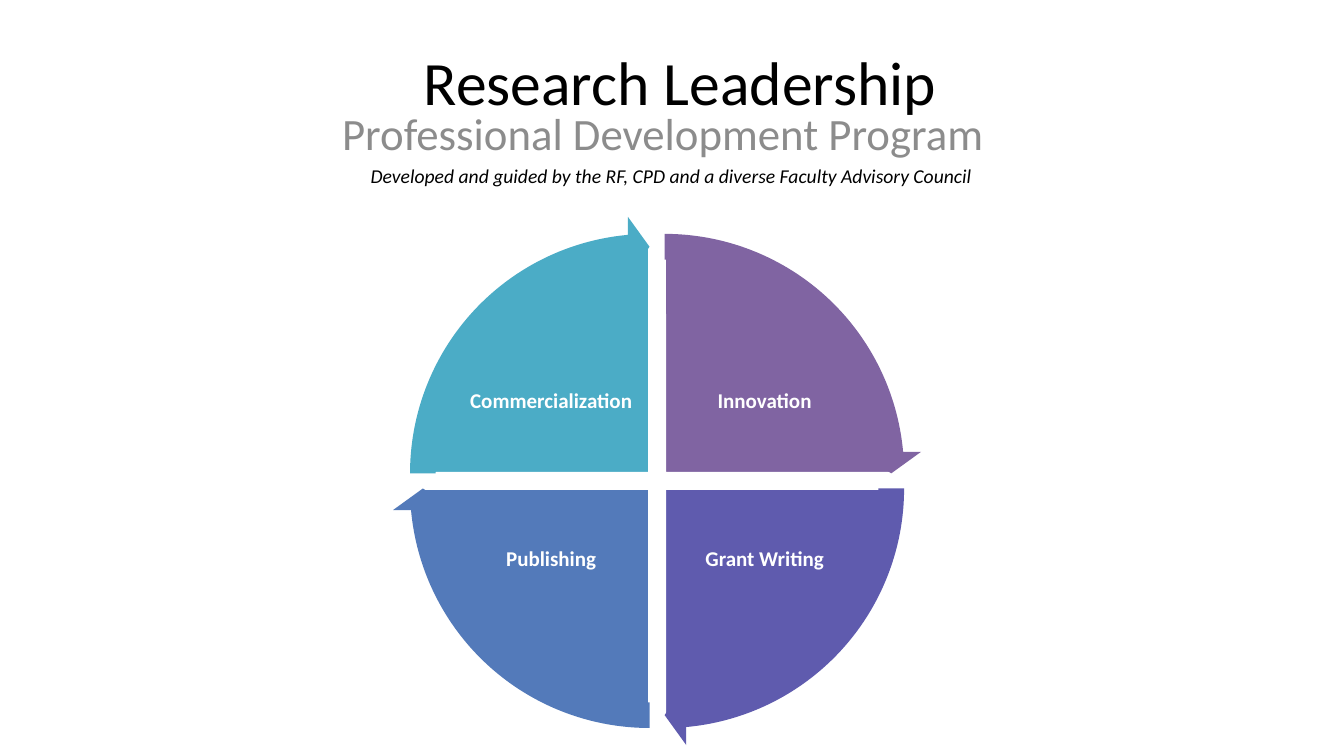
from dataclasses import dataclass

from pptx import Presentation
from pptx.dml.color import RGBColor
from pptx.enum.shapes import MSO_SHAPE
from pptx.enum.text import MSO_ANCHOR, PP_ALIGN
from pptx.util import Cm, Pt


@dataclass(frozen=True)
class Theme:
    font: str = "Calibri"
    black: str = "000000"
    grey: str = "8C8C8C"
    white: str = "FFFFFF"
    purple: str = "8064A2"
    indigo: str = "5F5BAE"
    blue: str = "537ABA"
    teal: str = "4BACC6"
    title_size: int = 44
    subtitle_size: int = 32
    label_size: int = 15
    caption_size: int = 14
    outline: int = 2


THEME = Theme()
HUB_X, HUB_Y, HUB_GAP = 16.56, 12.12, 0.19
PIE_DIAMETER, ARROW_DIAMETER = 11.56, 12.98
LABEL_CENTER_X, LABEL_OFFSET_X, LABEL_OFFSET_Y = 16.58, 2.69, 1.99
LABEL_WIDTH, LABEL_HEIGHT = 4.27, 3.18
QUARTER, FULL_TURN = 54, 216
ARROW_SWEEP = 50.72

QUADRANTS = [
    ("Innovation", THEME.purple, 1, -1, 162),
    ("Grant Writing", THEME.indigo, 1, 1, 0),
    ("Publishing", THEME.blue, -1, 1, 54),
    ("Commercialization", THEME.teal, -1, -1, 108),
]


def add_text(slide, text, box, size, color, align=PP_ALIGN.CENTER,
             anchor=MSO_ANCHOR.TOP, bold=False, italic=False, inset=None):
    shape = slide.shapes.add_textbox(*(Cm(length) for length in box))
    text_frame = shape.text_frame
    text_frame.word_wrap = True
    text_frame.vertical_anchor = anchor
    if inset is not None:
        text_frame.margin_left = text_frame.margin_right = Cm(inset)
        text_frame.margin_top = text_frame.margin_bottom = Cm(inset)
    text_frame.text = text
    paragraph = text_frame.paragraphs[0]
    paragraph.alignment = align
    font = paragraph.runs[0].font
    font.name = THEME.font
    font.size = Pt(size)
    font.bold = bold
    font.italic = italic
    font.color.rgb = RGBColor.from_string(color)
    return paragraph


def add_round_shape(slide, kind, side_x, side_y, diameter, color, adjustments):
    left = HUB_X + side_x * HUB_GAP - diameter / 2
    top = HUB_Y + side_y * HUB_GAP - diameter / 2
    shape = slide.shapes.add_shape(
        kind, Cm(left), Cm(top), Cm(diameter), Cm(diameter))
    for index, value in enumerate(adjustments):
        shape.adjustments[index] = value
    shape.shadow.inherit = False
    shape.fill.solid()
    shape.fill.fore_color.rgb = RGBColor.from_string(color)
    shape.line.fill.background()
    return shape


def add_quadrant(slide, label, color, side_x, side_y, start):
    pie = add_round_shape(slide, MSO_SHAPE.PIE, side_x, side_y, PIE_DIAMETER,
                          color, (start, (start + QUARTER) % FULL_TURN))
    pie.line.color.rgb = RGBColor.from_string(THEME.white)
    pie.line.width = Pt(THEME.outline)
    box = (LABEL_CENTER_X + side_x * LABEL_OFFSET_X - LABEL_WIDTH / 2,
           HUB_Y + side_y * LABEL_OFFSET_Y - LABEL_HEIGHT / 2,
           LABEL_WIDTH, LABEL_HEIGHT)
    paragraph = add_text(slide, label, box, THEME.label_size, THEME.white,
                         anchor=MSO_ANCHOR.MIDDLE, bold=True, inset=0.05)
    paragraph.line_spacing = 0.9


def add_cycle_arrow(slide, color, side_x, side_y, start):
    add_round_shape(slide, MSO_SHAPE.CIRCULAR_ARROW, side_x, side_y,
                    ARROW_DIAMETER, color,
                    (0.05, 3.28, start + ARROW_SWEEP, start, 0.06))


def main():
    presentation = Presentation()
    presentation.slide_width = Cm(33.87)
    presentation.slide_height = Cm(19.05)
    slide = presentation.slides.add_slide(presentation.slide_layouts[6])

    add_text(slide, "Research Leadership", (6.35, 0, 21.59, 4.09),
             THEME.title_size, THEME.black, anchor=MSO_ANCHOR.MIDDLE)
    add_text(slide, "Professional Development Program", (7.82, 2.54, 17.78, 1.91),
             THEME.subtitle_size, THEME.grey)

    for quadrant in QUADRANTS:
        add_quadrant(slide, *quadrant)
    for _, color, side_x, side_y, start in QUADRANTS:
        add_cycle_arrow(slide, color, side_x, side_y, start)

    add_text(slide,
             "Developed and guided by the RF, CPD and a diverse Faculty Advisory Council",
             (9.09, 4.01, 16.31, 0.86), THEME.caption_size, THEME.black,
             align=PP_ALIGN.LEFT, italic=True)
    presentation.save("out.pptx")


if __name__ == "__main__":
    main()
